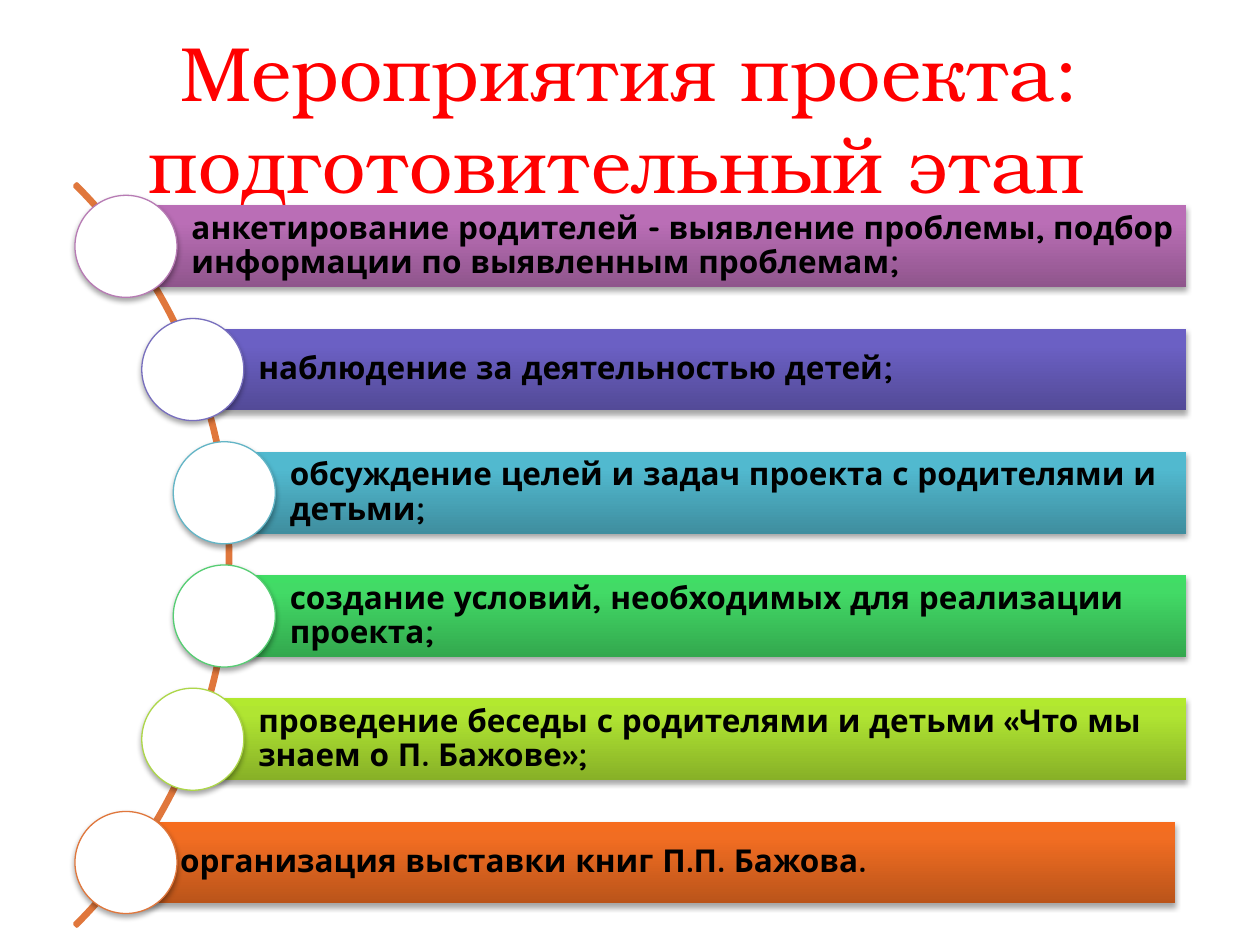
from pptx import Presentation
from pptx import util as u
from pptx.dml.color import RGBColor
from pptx.enum import shapes, text
from pptx.oxml import parse_xml
from pptx.oxml.ns import nsdecls

RED = RGBColor(0xFF, 0x00, 0x00)
BLACK = RGBColor(0x00, 0x00, 0x00)
WHITE = RGBColor(0xFF, 0xFF, 0xFF)
ORANGE = RGBColor(0xE0, 0x77, 0x3C)

# Grid: six equal rows; each bar starts at the centre of its circle
ROW_STEP = 0.978
FIRST_CENTRE = 1.955
BAR_HEIGHT = 0.65
BAR_RIGHT = 9.415
CIRCLE = 0.81
ARC_SIZE = 8.33
LAST_BAR_SHIFT = -0.09

# wording, centre of circle, circle line, gradient stops from bottom to top
ACTIVITIES = [
    ("анкетирование родителей - выявление проблемы, подбор информации по выявленным проблемам;",
     1.0, RGBColor(0xB7, 0x7B, 0xB4), ("8F558C", "BA6EB6", "BC6EB8")),
    ("наблюдение за деятельностью детей;",
     1.53, RGBColor(0x78, 0x6F, 0xBE), ("534A97", "6B60C4", "6A5FC7")),
    ("обсуждение целей и задач проекта с родителями и детьми;",
     1.78, RGBColor(0x63, 0xB5, 0xC6), ("3F8E9F", "51B9CF", "4FBBD2")),
    ("создание условий, необходимых для реализации проекта;",
     1.78, RGBColor(0x56, 0xCE, 0x73), ("33A84E", "42DA66", "40DD65")),
    ("проведение беседы с родителями и детьми «Что мы знаем о П. Бажове»;",
     1.53, RGBColor(0xAD, 0xD7, 0x49), ("87B027", "B0E532", "B2E92F")),
    ("организация выставки книг П.П. Бажова.",
     1.0, ORANGE, ("BA541A", "F16D22", "F66C1E")),
]


def add_soft_shadow(shape):
    shape.shadow.inherit = False
    effects = shape._element.spPr.find("{*}effectLst")
    effects.append(parse_xml(
        f'<a:outerShdw {nsdecls("a")} blurRad="40000" dist="23000" dir="5400000" rotWithShape="0">'
        '<a:srgbClr val="000000"><a:alpha val="35000"/></a:srgbClr></a:outerShdw>'))


def fill_upward(shape, colours):
    """Fill with a three-stop gradient that runs from bottom to top."""
    stops = "".join(f'<a:gs pos="{place}"><a:srgbClr val="{colour}"/></a:gs>'
                    for place, colour in zip((0, 80000, 100000), colours))
    shape._element.spPr.find("{*}prstGeom").addnext(parse_xml(
        f'<a:gradFill {nsdecls("a")} rotWithShape="1"><a:gsLst>{stops}</a:gsLst>'
        '<a:lin ang="16200000" scaled="0"/></a:gradFill>'))


deck = Presentation()
deck.slide_width, deck.slide_height = u.Inches(10), u.Inches(7.5)
slide = deck.slides.add_slide(deck.slide_layouts[6])

title = slide.shapes.add_textbox(u.Inches(0.5), u.Inches(0.3), u.Inches(9), u.Inches(1.25)).text_frame
title.word_wrap = True
title.vertical_anchor = text.MSO_ANCHOR.MIDDLE
heading = title.paragraphs[0]
heading.alignment = text.PP_ALIGN.CENTER
run = heading.add_run()
run.text = "Мероприятия проекта: подготовительный этап "
run.font.name = "TeX Gyre Bonum"
run.font.size = u.Pt(44)
run.font.color.rgb = RED

arc = slide.shapes.add_shape(shapes.MSO_SHAPE.BLOCK_ARC, u.Inches(-6.5), u.Inches(0.24),
                             u.Inches(ARC_SIZE), u.Inches(ARC_SIZE))
for index, value in enumerate((189, 27, 0.003)):
    arc.adjustments[index] = value
arc.shadow.inherit = False
arc.fill.background()
arc.line.color.rgb = ORANGE
arc.line.width = u.Pt(2)

for row, (wording, centre_x, outline, gradient) in enumerate(ACTIVITIES):
    centre_y = FIRST_CENTRE + row * ROW_STEP
    shift = LAST_BAR_SHIFT if row == len(ACTIVITIES) - 1 else 0

    bar = slide.shapes.add_shape(
        shapes.MSO_SHAPE.RECTANGLE, u.Inches(centre_x + shift), u.Inches(centre_y - BAR_HEIGHT / 2),
        u.Inches(BAR_RIGHT - centre_x), u.Inches(BAR_HEIGHT))
    fill_upward(bar, gradient)
    bar.line.fill.background()
    add_soft_shadow(bar)

    frame = bar.text_frame
    frame.word_wrap = True
    frame.vertical_anchor = text.MSO_ANCHOR.MIDDLE
    frame.margin_left = u.Inches(0.52)
    frame.margin_right = frame.margin_top = frame.margin_bottom = u.Inches(0.05)
    activity = frame.paragraphs[0]
    activity.alignment = text.PP_ALIGN.LEFT
    activity.line_spacing = 0.9
    run = activity.add_run()
    run.text = wording
    run.font.name = "Quicksand"
    run.font.size = u.Pt(18)
    run.font.bold = True
    run.font.color.rgb = BLACK

    circle = slide.shapes.add_shape(
        shapes.MSO_SHAPE.OVAL, u.Inches(centre_x - CIRCLE / 2), u.Inches(centre_y - CIRCLE / 2),
        u.Inches(CIRCLE), u.Inches(CIRCLE))
    circle.fill.solid()
    circle.fill.fore_color.rgb = WHITE
    circle.line.color.rgb = outline
    circle.line.width = u.Pt(0.75)
    add_soft_shadow(circle)

deck.save("out.pptx")
